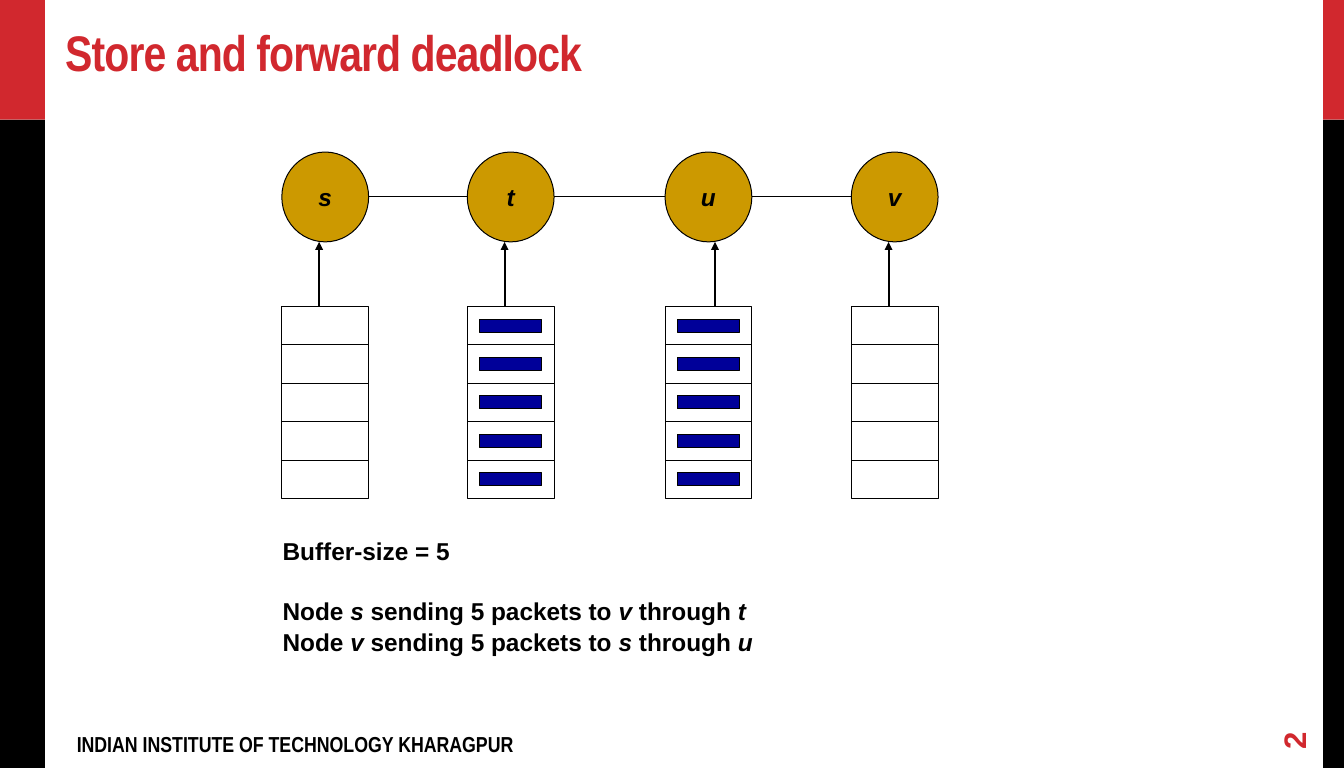
"""Build the slide on store and forward deadlock."""
from dataclasses import dataclass

from lxml.etree import SubElement
from pptx import Presentation
from pptx.dml.color import RGBColor
from pptx.enum.shapes import MSO_CONNECTOR, MSO_SHAPE
from pptx.enum.text import MSO_ANCHOR, PP_ALIGN
from pptx.oxml.ns import qn
from pptx.util import Cm, Pt


@dataclass(frozen=True)
class Theme:
    """Colours, fonts, type sizes and line widths of the slide."""
    red: str = "D1282E"
    black: str = "000000"
    gold: str = "CC9900"
    navy: str = "000099"
    body_font: str = "Arial"
    narrow_font: str = "Arial Narrow"
    title_size: float = 36.9
    footer_size: float = 16
    number_size: float = 23
    body_size: float = 18
    thin: float = 0.75
    thick: float = 1.5


THEME = Theme()
SLIDE_WIDTH, SLIDE_HEIGHT = 35, 20
NODE_WIDTH, NODE_HEIGHT, NODE_TOP = 2.26, 2.34, 3.96
BUFFER_TOP, BUFFER_SIZE, SLOT_HEIGHT = 7.98, 5, 1
PACKET_WIDTH, PACKET_HEIGHT = 1.62, 0.34
NODES = (
    ("s", 7.34, 0.97, False),
    ("t", 12.17, 0.97, True),
    ("u", 17.32, 1.3, True),
    ("v", 22.17, 0.97, False),
)


def write_text(frame, lines, *, size=THEME.body_size, font=THEME.body_font,
               color=THEME.black, align=PP_ALIGN.LEFT, anchor=MSO_ANCHOR.TOP,
               wrap=True, insets=(0.25, 0.13), tracking=0, line_spacing=None,
               gaps=()):
    """Write bold lines, with parts between asterisks in italics."""
    frame.word_wrap = wrap
    frame.vertical_anchor = anchor
    frame.margin_left = frame.margin_right = Cm(insets[0])
    frame.margin_top = frame.margin_bottom = Cm(insets[1])
    for index, line in enumerate(lines):
        paragraph = frame.paragraphs[0] if index == 0 else frame.add_paragraph()
        paragraph.alignment = align
        if line_spacing:
            paragraph.line_spacing = line_spacing
        if index in gaps:
            paragraph.space_before = Pt(gaps[index])
        for part, words in enumerate(line.split("*")):
            if not words:
                continue
            run = paragraph.add_run()
            run.text = words
            run.font.size = Pt(size)
            run.font.name = font
            run.font.bold = True
            run.font.italic = part % 2 == 1
            run.font.color.rgb = RGBColor.from_string(color)
            if tracking:
                run._r.get_or_add_rPr().set("spc", str(round(tracking * 100)))


def add_text(slide, left, top, width, height, lines, rotation=0, **text_format):
    """Add a text box with formatted lines."""
    box = slide.shapes.add_textbox(Cm(left), Cm(top), Cm(width), Cm(height))
    box.rotation = rotation
    write_text(box.text_frame, lines, **text_format)


def add_block(slide, left, top, width, height, fill=None, outlined=True,
              kind=MSO_SHAPE.RECTANGLE):
    """Add a flat preset shape with an optional fill and outline."""
    block = slide.shapes.add_shape(kind, Cm(left), Cm(top), Cm(width), Cm(height))
    block.shadow.inherit = False
    if fill:
        block.fill.solid()
        block.fill.fore_color.rgb = RGBColor.from_string(fill)
    else:
        block.fill.background()
    if outlined:
        block.line.color.rgb = RGBColor.from_string(THEME.black)
        block.line.width = Pt(THEME.thin)
    else:
        block.line.fill.background()
    return block


def add_line(slide, start, end, width=THEME.thin, arrow=False):
    """Add a straight black line, with an arrowhead at its end if asked."""
    line = slide.shapes.add_connector(
        MSO_CONNECTOR.STRAIGHT, *(Cm(value) for value in (*start, *end)))
    line.line.color.rgb = RGBColor.from_string(THEME.black)
    line.line.width = Pt(width)
    if arrow:
        SubElement(line.line._get_or_add_ln(), qn("a:tailEnd"), type="triangle")
    SubElement(line._element.spPr, qn("a:effectLst"))


def add_side_bar(slide, left, width):
    """Add a black bar with a red head along one edge of the slide."""
    split = 3.12
    add_block(slide, left, 0, width, split, THEME.red, outlined=False)
    add_block(slide, left, split, width, SLIDE_HEIGHT - split, THEME.black,
              outlined=False)


def add_node(slide, name, left):
    """Add a network node with its name."""
    node = add_block(slide, left, NODE_TOP, NODE_WIDTH, NODE_HEIGHT, THEME.gold,
                     kind=MSO_SHAPE.OVAL)
    write_text(node.text_frame, [f"*{name}*"], align=PP_ALIGN.CENTER,
               anchor=MSO_ANCHOR.MIDDLE, wrap=False)


def add_buffer(slide, left, full):
    """Add a buffer of equal slots, each holding a packet if full."""
    add_block(slide, left, BUFFER_TOP, NODE_WIDTH, BUFFER_SIZE * SLOT_HEIGHT)
    for slot in range(BUFFER_SIZE):
        slot_top = BUFFER_TOP + slot * SLOT_HEIGHT
        if slot:
            add_line(slide, (left, slot_top), (left + NODE_WIDTH, slot_top))
        if full:
            add_block(slide, left + (NODE_WIDTH - PACKET_WIDTH) / 2,
                      slot_top + (SLOT_HEIGHT - PACKET_HEIGHT) / 2,
                      PACKET_WIDTH, PACKET_HEIGHT, THEME.navy)


def add_network(slide):
    """Add the nodes, their buffers and the links between neighbours."""
    for name, left, arrow_offset, full in NODES:
        add_node(slide, name, left)
        add_buffer(slide, left, full)
        arrow_x = left + arrow_offset
        add_line(slide, (arrow_x, BUFFER_TOP), (arrow_x, NODE_TOP + NODE_HEIGHT),
                 THEME.thick, arrow=True)
    link_y = NODE_TOP + NODE_HEIGHT / 2
    for (_, left, *_), (_, next_left, *_) in zip(NODES, NODES[1:]):
        add_line(slide, (left + NODE_WIDTH, link_y), (next_left, link_y))


def main():
    """Build and save the presentation."""
    presentation = Presentation()
    presentation.slide_width = Cm(SLIDE_WIDTH)
    presentation.slide_height = Cm(SLIDE_HEIGHT)
    slide = presentation.slides.add_slide(presentation.slide_layouts[6])
    add_side_bar(slide, 34.46, 0.54)
    add_side_bar(slide, 0, 1.17)
    add_text(slide, 1.45, 0.46, 32.66, 1.78, ["Store and forward deadlock"],
             size=THEME.title_size, font=THEME.narrow_font, color=THEME.red,
             anchor=MSO_ANCHOR.BOTTOM, tracking=-0.7)
    add_text(slide, 1.75, 18.9, 21.29, 0.86,
             ["INDIAN INSTITUTE OF TECHNOLOGY KHARAGPUR"],
             size=THEME.footer_size, font=THEME.narrow_font)
    add_text(slide, 32.66, 18.31, 2.06, 0.86, ["2"], rotation=270,
             size=THEME.number_size, color=THEME.red, anchor=MSO_ANCHOR.MIDDLE)
    add_network(slide)
    add_text(slide, 7.11, 13.79, 16.54, 3.33,
             ["Buffer-size = 5",
              "Node *s* sending 5 packets to *v* through *t*",
              "Node *v* sending 5 packets to *s* through *u*"],
             line_spacing=1.05, gaps={1: 22})
    presentation.save("out.pptx")


if __name__ == "__main__":
    main()
